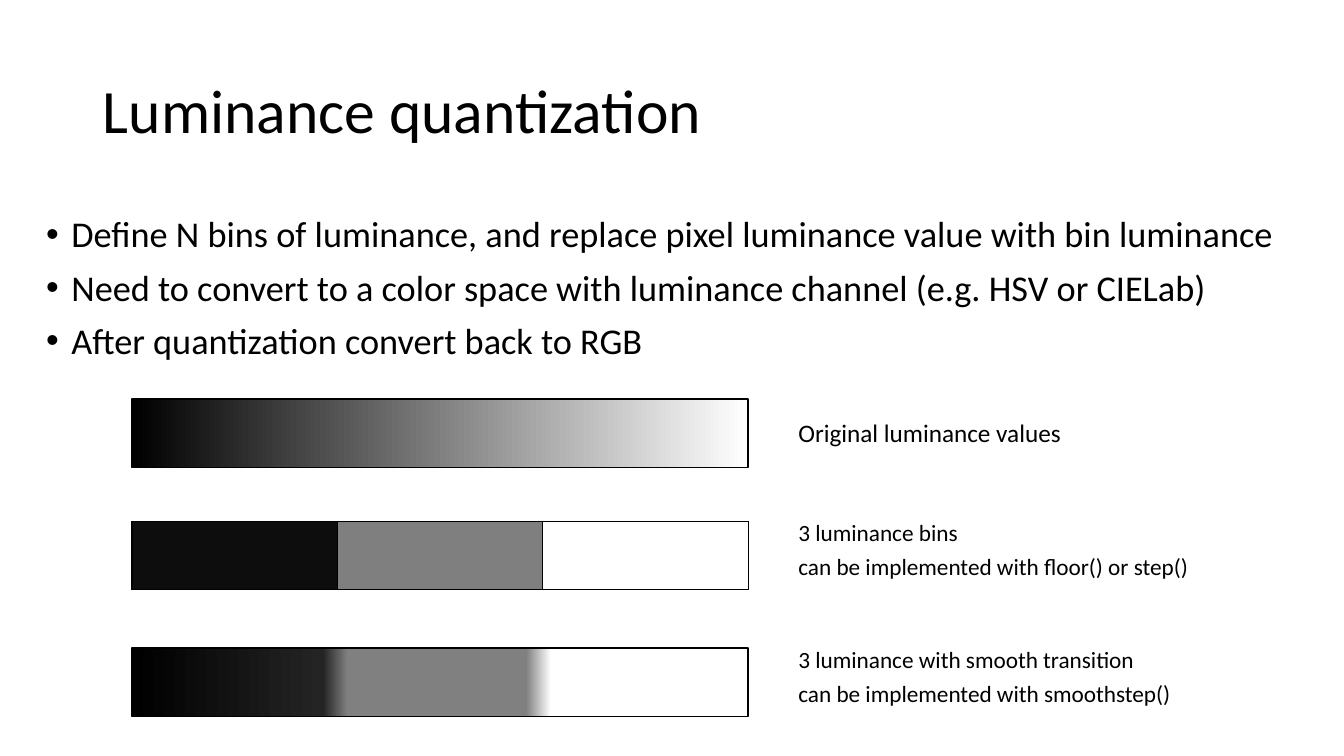
from lxml import etree
from pptx import Presentation
from pptx.dml.color import RGBColor
from pptx.enum.shapes import MSO_SHAPE
from pptx.enum.text import MSO_ANCHOR, MSO_AUTO_SIZE, PP_ALIGN
from pptx.oxml import parse_xml
from pptx.oxml.ns import nsdecls, qn
from pptx.util import Inches, Pt

BAR_LEFT, BAR_WIDTH, BAR_HEIGHT = 1.31, 6.11, 0.68
LABEL_LEFT = 7.82


def color(hex_color):
    return RGBColor.from_string(hex_color)


def write_lines(tf, lines, size, spacing, before, bullet=False):
    """Fill a text frame with one black Calibri paragraph per line."""
    tf.word_wrap = True
    tf.auto_size = MSO_AUTO_SIZE.NONE
    for i, line in enumerate(lines):
        p = tf.paragraphs[0] if i == 0 else tf.add_paragraph()
        p.alignment = PP_ALIGN.LEFT
        p.line_spacing = spacing
        p.space_before = Pt(before)
        if bullet:
            pPr = p._p.get_or_add_pPr()
            pPr.set("marL", str(Inches(0.25)))
            pPr.set("indent", str(-Inches(0.25)))
            etree.SubElement(pPr, qn("a:buFont"), typeface="Arial")
            etree.SubElement(pPr, qn("a:buChar"), char="•")
        r = p.add_run()
        r.text = line
        r.font.name = "Calibri"
        r.font.size = Pt(size)
        r.font.color.rgb = color("000000")


prs = Presentation()
prs.slide_width, prs.slide_height = Inches(13.33), Inches(7.5)
slide = prs.slides.add_slide(prs.slide_layouts[5])

# Title
title = slide.shapes.title
title.left, title.top = Inches(0.92), Inches(0.4)
title.width, title.height = Inches(11.5), Inches(1.45)
title.text_frame.vertical_anchor = MSO_ANCHOR.MIDDLE
write_lines(title.text_frame, ["Luminance quantization"], 44, 0.9, 0)

# Bullets
body = slide.shapes.add_textbox(Inches(0.36), Inches(2.1), Inches(12.42), Inches(1.73))
write_lines(body.text_frame, [
    "Define N bins of luminance, and replace pixel luminance value with bin luminance",
    "Need to convert to a color space with luminance channel (e.g. HSV or CIELab)",
    "After quantization convert back to RGB",
], 25.9, 0.9, 10, bullet=True)

# Gradient bars: continuous and smoothly stepped luminance
gradient_bars = [
    (3.96, [(0, "000000"), (100, "FFFFFF")]),
    (6.43, [(0, "000000"), (31, "242424"), (35, "808080"),
            (64, "808080"), (68, "FFFFFF"), (100, "FFFFFF")]),
]
for top, stops in gradient_bars:
    sp = slide.shapes.add_shape(MSO_SHAPE.RECTANGLE, Inches(BAR_LEFT), Inches(top),
                                Inches(BAR_WIDTH), Inches(BAR_HEIGHT))
    sp.shadow.inherit = False
    sp.line.color.rgb = color("000000")
    sp.line.width = Pt(1)
    sp.fill.gradient()
    sp.fill.gradient_angle = 0
    gs_list = sp._element.spPr.find(qn("a:gradFill")).find(qn("a:gsLst"))
    for gs in list(gs_list):
        gs_list.remove(gs)
    for percent, shade in stops:
        gs = etree.SubElement(gs_list, qn("a:gs"), pos=str(percent * 1000))
        etree.SubElement(gs, qn("a:srgbClr"), val=shade)

# Luminance bins
bins = ["0D0D0D", "7F7F7F", "FFFFFF"]
table = slide.shapes.add_table(1, len(bins), Inches(BAR_LEFT), Inches(5.17),
                               Inches(BAR_WIDTH), Inches(BAR_HEIGHT)).table
table.first_row = table.horz_banding = False
for cell, shade in zip(table.rows[0].cells, bins):
    cell.fill.solid()
    cell.fill.fore_color.rgb = color(shade)
    tcPr = cell._tc.get_or_add_tcPr()
    for i, side in enumerate("LRTB"):
        tcPr.insert(i, parse_xml(
            f'<a:ln{side} {nsdecls("a")} w="{Pt(1)}"><a:solidFill>'
            f'<a:srgbClr val="000000"/></a:solidFill></a:ln{side}>'))

# Labels beside the bars
labels = [
    (4.12, 3.77, 0.51, 18, 0.9, ["Original luminance values"]),
    (5.17, 4.19, 0.67, 16.6, 0.7,
     ["3 luminance bins", "can be implemented with floor() or step()"]),
    (6.43, 4.29, 0.68, 16.6, 0.7,
     ["3 luminance with smooth transition", "can be implemented with smoothstep()"]),
]
for top, width, height, size, spacing, lines in labels:
    label = slide.shapes.add_textbox(Inches(LABEL_LEFT), Inches(top),
                                     Inches(width), Inches(height))
    write_lines(label.text_frame, lines, size, spacing, 10)

prs.save("out.pptx")
